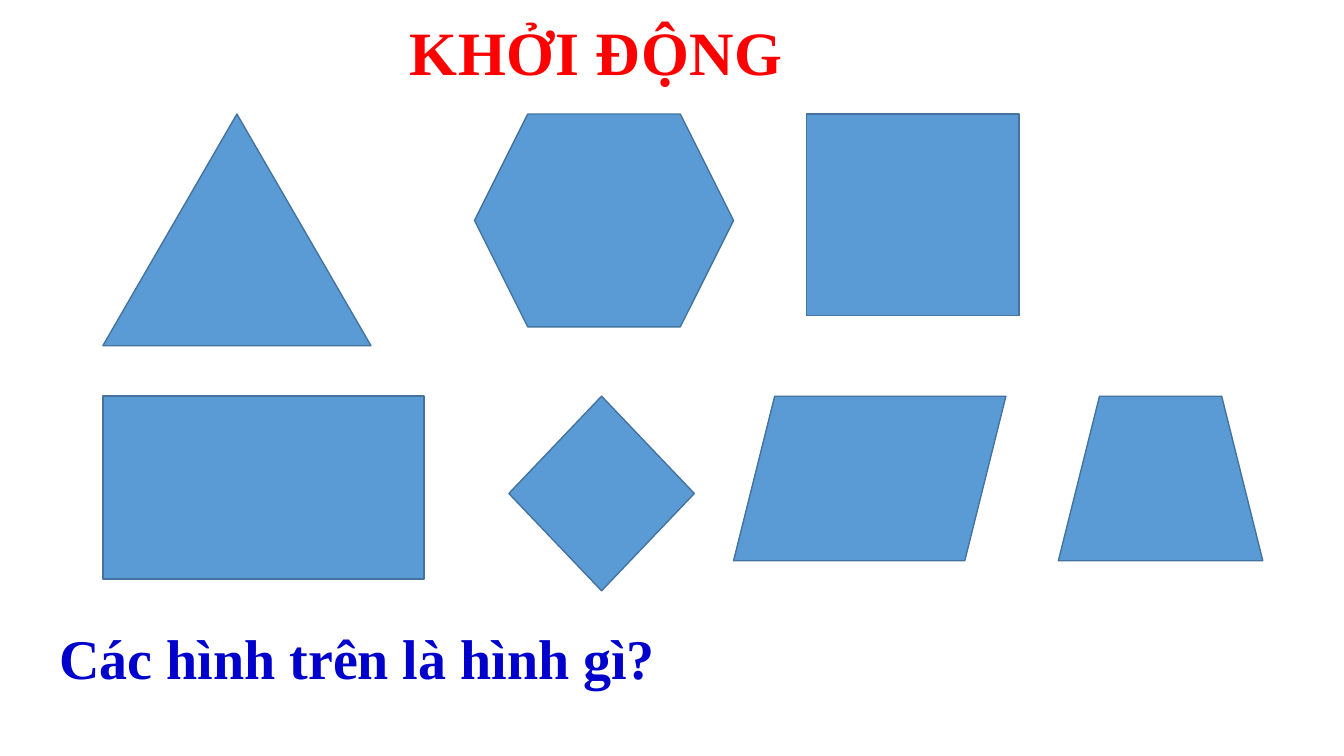
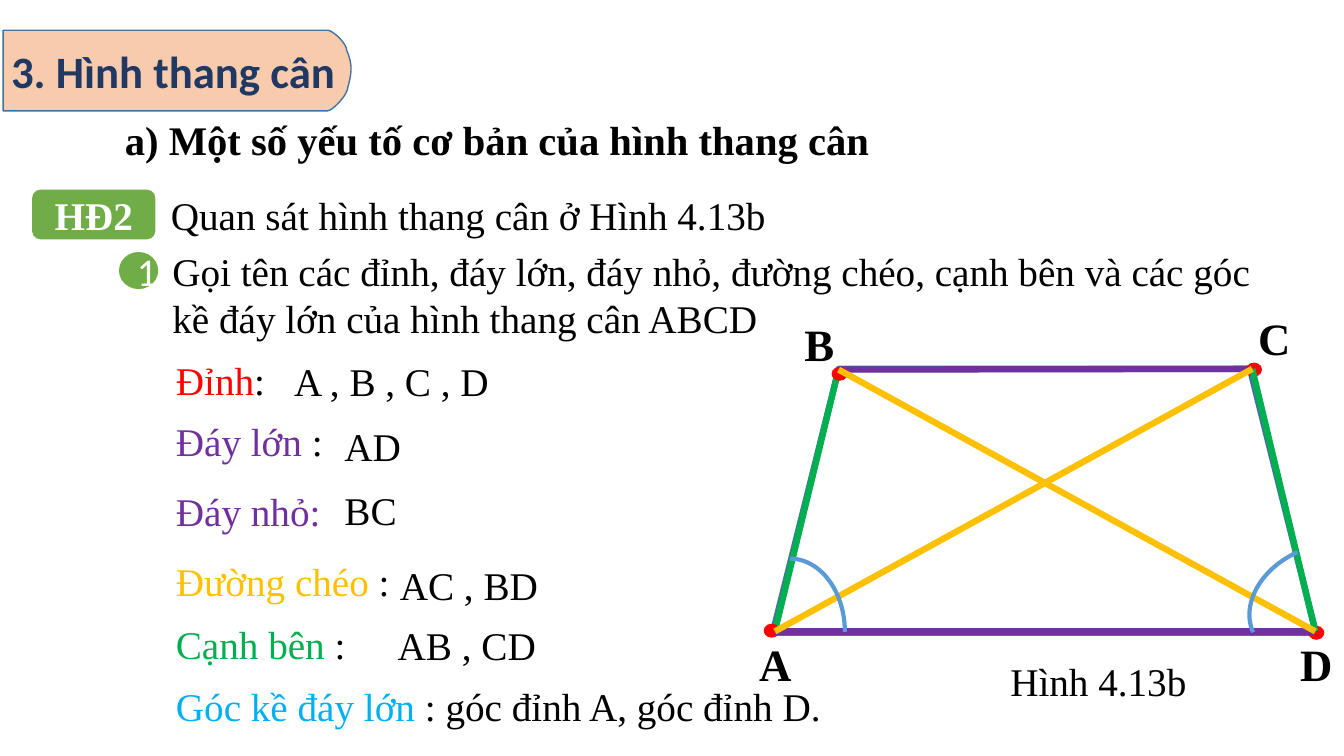
from lxml import etree
from pptx import Presentation
from pptx import util as u
from pptx.dml import color
from pptx.enum import shapes, text
from pptx.oxml import ns

SERIF, SANS = "Times New Roman", "Calibri"
BLACK, WHITE, RED, GREEN = "000000", "FFFFFF", "FF0000", "00B050"
PURPLE, GOLD, SKY, LEAF = "7030A0", "FFC000", "00B0F0", "70AD47"
BLUE, OUTLINE, PEACH, NAVY = "5B9BD5", "43739E", "F8CBAD", "203864"
NARROW, WIDE = (7.2, 3.6), (8.64, 4.32)
LEFT, CENTER, JUSTIFY = text.PP_ALIGN.LEFT, text.PP_ALIGN.CENTER, text.PP_ALIGN.JUSTIFY
KIND = shapes.MSO_SHAPE

GALLERY = [
    (KIND.ISOSCELES_TRIANGLE, 73.5, 81.5, 191.5, 165.5),
    (KIND.HEXAGON, 339, 81.5, 185, 152),
    (KIND.RECTANGLE, 576, 81.5, 152, 144),
    (KIND.RECTANGLE, 73.5, 283, 229.5, 130.5),
    (KIND.DIAMOND, 363.5, 283, 132.5, 139),
    (KIND.PARALLELOGRAM, 524, 283, 194.5, 117.5),
    (KIND.TRAPEZOID, 756, 283, 146, 117.5),
]
VERTICES = {"A": (553.5, 451), "B": (599, 264), "C": (894.5, 263.5), "D": (939.5, 451)}
DOTS = [(545.5, 445.5), (594, 262), (890, 259), (934.5, 447)]
LABELS = {"A": (533.5, 450.5), "B": (566, 222), "C": (890, 217.5), "D": (920, 450.5)}
TERMS = [
    ("Đỉnh", ":", RED, 250.5),
    ("Đáy lớn ", ":", PURPLE, 294),
    ("Đáy nhỏ:", "", PURPLE, 343.5),
    ("Đường chéo ", ":", GOLD, 394),
    ("Cạnh bên ", ":", GREEN, 438.5),
    ("Góc kề đáy lớn ", ": góc đỉnh A, góc đỉnh D.", SKY, 483),
]
ANSWERS = [
    ("A , B , C , D", 203, 252, 155),
    ("AD", 239, 298, 55.5),
    ("BC", 239, 343.5, 52),
    ("AC , BD", 278.5, 397.5, 114.5),
    ("AB , CD", 277, 440.5, 114.5),
]


def rgb(value):
    return color.RGBColor.from_string(value)


def points(*lengths):
    return [u.Pt(length) for length in lengths]


def paint(shape, fill=None, line=None, weight=1):
    shape.shadow.inherit = False
    if fill:
        shape.fill.solid()
        shape.fill.fore_color.rgb = rgb(fill)
    else:
        shape.fill.background()
    if line:
        shape.line.color.rgb = rgb(line)
        shape.line.width = u.Pt(weight)
    else:
        shape.line.fill.background()


def write(shape, parts, size, font=SERIF, bold=False, align=LEFT,
          insets=WIDE, anchor=text.MSO_ANCHOR.TOP, wrap=True):
    frame = shape.text_frame
    frame.word_wrap = wrap
    frame.vertical_anchor = anchor
    frame.margin_left = frame.margin_right = u.Pt(insets[0])
    frame.margin_top = frame.margin_bottom = u.Pt(insets[1])
    paragraph = frame.paragraphs[0]
    paragraph.alignment = align
    for content, ink in parts:
        run = paragraph.add_run()
        run.text = content
        run.font.name, run.font.size, run.font.bold = font, u.Pt(size), bold
        run.font.color.rgb = rgb(ink)
    return paragraph


def add_preset(slide, kind, left, top, width, height, fill=None, line=None, weight=1):
    shape = slide.shapes.add_shape(kind, *points(left, top, width, height))
    paint(shape, fill, line, weight)
    return shape


def add_text(slide, left, top, width, height, parts, size=28, **style):
    box = slide.shapes.add_textbox(*points(left, top, width, height))
    write(box, parts, size, **style)
    box.text_frame.auto_size = text.MSO_AUTO_SIZE.SHAPE_TO_FIT_TEXT


def add_badge(slide, kind, left, top, width, height, content, **style):
    badge = add_preset(slide, kind, left, top, width, height, LEAF)
    write(badge, [(content, WHITE)], 28, align=CENTER,
          anchor=text.MSO_ANCHOR.MIDDLE, **style)


def add_line(slide, start, end, ink):
    line = slide.shapes.add_connector(shapes.MSO_CONNECTOR.STRAIGHT, *points(*start, *end))
    line.line.color.rgb = rgb(ink)
    line.line.width = u.Pt(4.5)
    etree.SubElement(line.element.spPr, ns.qn("a:effectLst"))


def set_title(slide, left, top, width, height, content, ink, size, **style):
    title = slide.shapes.title
    title.left, title.top, title.width, title.height = points(left, top, width, height)
    title.text_frame.auto_size = text.MSO_AUTO_SIZE.NONE
    return write(title, [(content, ink)], size, bold=True, insets=NARROW, **style)


def curve(start, first, second, end, steps=10):
    for step in range(1, steps + 1):
        t = step / steps
        yield tuple((1 - t) ** 3 * a + 3 * (1 - t) ** 2 * t * b
                    + 3 * (1 - t) * t ** 2 * c + t ** 3 * d
                    for a, b, c, d in zip(start, first, second, end))


def add_banner(slide):
    outline = [
        (234, 21.6),
        *curve((234, 21.6), (237.6, 21.6), (247.7, 31), (247.7, 36)),
        *curve((247.7, 36), (251.3, 44.6), (252, 50.4), (248.4, 62.6)),
        *curve((248.4, 62.6), (248.4, 67.7), (237.6, 79.2), (234, 79.2)),
        (2.2, 79.2),
    ]
    builder = slide.shapes.build_freeform(*points(2.2, 21.6), scale=1.0)
    builder.add_line_segments([points(*corner) for corner in outline], close=True)
    banner = builder.convert_to_shape()
    paint(banner, PEACH, OUTLINE)
    slide.shapes.title.element.addprevious(banner.element)


def add_edges(slide, edges):
    for (start, end), ink in edges:
        add_line(slide, VERTICES[start], VERTICES[end], ink)


def add_figure(slide):
    add_preset(slide, KIND.TRAPEZOID, 552, 263.5, 388, 188.5, line=OUTLINE, weight=4.5)
    add_edges(slide, [("AB", GREEN), ("BC", PURPLE)])
    for left, top in DOTS:
        add_preset(slide, KIND.OVAL, left, top, 11.5, 10, RED)
    add_edges(slide, [("DC", GREEN), ("AD", PURPLE), ("BD", GOLD), ("AC", GOLD)])
    for name, (left, top) in LABELS.items():
        add_text(slide, left, top, 39.5, 47.5, [(name, BLACK)], 32, bold=True)
    for left, top, angle in [(525, 399, 0), (903.5, 378, 245.9)]:
        arc = add_preset(slide, KIND.ARC, left, top, 78.5, 104.5, line=BLUE, weight=3)
        arc.rotation = angle
    add_text(slide, 713, 465, 144.5, 44, [("Hình 4.13b", BLACK)])


def build_warm_up(slide):
    title = set_title(slide, 173, 6.5, 506, 60.5, "KHỞI ĐỘNG", RED, 44, align=CENTER)
    title.runs[0].font._element.set("spc", "50")
    add_text(slide, 35.5, 442, 693.5, 55.5, [("Các hình trên là hình gì?", "0000CC")], 40,
             bold=True, align=JUSTIFY, insets=NARROW)
    for kind, *box in GALLERY:
        add_preset(slide, kind, *box, BLUE, OUTLINE)


def build_trapezoid(slide):
    set_title(slide, 0.7, 27.4, 247.7, 46, "3. Hình thang cân", NAVY, 32,
              font=SANS, wrap=False)
    add_banner(slide)
    add_text(slide, 80.5, 78, 622, 44,
             [("a) Một số yếu tố cơ bản của hình thang cân", BLACK)], 29, bold=True)
    add_badge(slide, KIND.ROUNDED_RECTANGLE, 23, 135.5, 88, 35.5, "HĐ2", bold=True)
    add_text(slide, 113.4, 132, 841, 44, [("Quan sát hình thang cân ở Hình 4.13b", BLACK)])
    add_badge(slide, KIND.OVAL, 85, 180, 28, 26.5, "1", font=SANS)
    add_text(slide, 114.5, 172, 818, 76.5,
             [("Gọi tên các đỉnh, đáy lớn, đáy nhỏ, đường chéo, cạnh bên và các góc "
               "kề đáy lớn của hình thang cân ABCD", BLACK)])
    add_figure(slide)
    for term, rest, ink, top in TERMS:
        parts = [(term, ink), (rest, BLACK)] if rest else [(term, ink)]
        add_text(slide, 117, top, 502, 44, parts)
    for answer, left, top, width in ANSWERS:
        add_text(slide, left, top, width, 41, [(answer, BLACK)], insets=NARROW, wrap=False)


def main():
    presentation = Presentation()
    presentation.slide_width, presentation.slide_height = points(960, 540)
    title_only = presentation.slide_layouts[5]
    for build in (build_warm_up, build_trapezoid):
        build(presentation.slides.add_slide(title_only))
    presentation.save("out.pptx")


if __name__ == "__main__":
    main()
